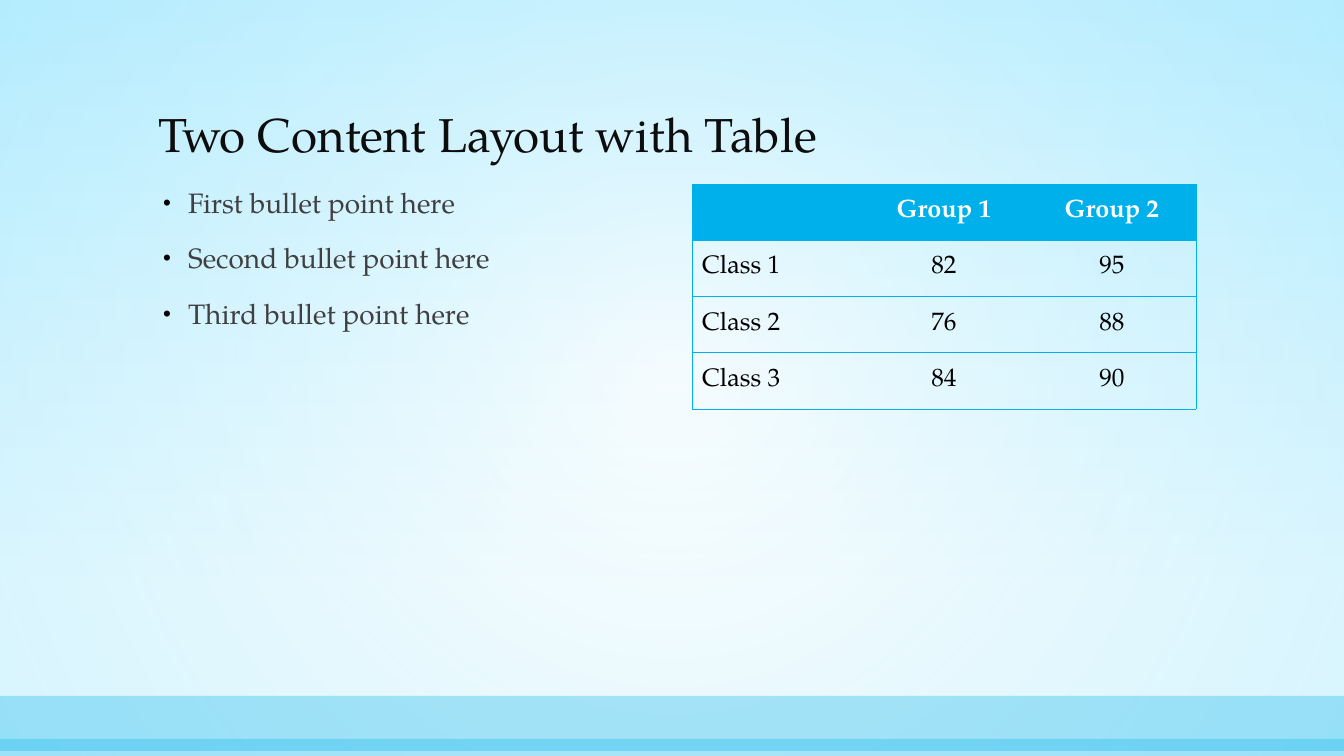
import pptx
import pptx.util
import pptx.dml.color
import pptx.enum.shapes
import pptx.enum.text
import pptx.oxml
import pptx.oxml.ns
from dataclasses import dataclass

PX = 914400 / 100.8
NS = pptx.oxml.ns.nsdecls("a")
ANCHOR = pptx.enum.text.MSO_ANCHOR
ALIGN = pptx.enum.text.PP_ALIGN


@dataclass(frozen=True)
class Theme:
    font: str = "TeX Gyre Pagella"
    accent: str = "00B0EA"
    sky: str = "C8F1FF"
    glow: str = "91E4FF"
    white: str = "FFFFFF"
    black: str = "000000"
    title: str = "0D0D0D"
    body: str = "404040"
    title_size: int = 34
    body_size: int = 20
    table_size: int = 18


THEME = Theme()
NO_GRID_STYLE = "{2D5ABB26-0587-4C30-8999-92F81FD0307C}"


def px(n):
    return pptx.util.Emu(round(n * PX))


def rgb(color):
    return pptx.dml.color.RGBColor.from_string(color)


def style(p, size, color, bold=False, align=ALIGN.LEFT):
    p.alignment = align
    p.font.name = THEME.font
    p.font.size = pptx.util.Pt(size)
    p.font.bold = bold
    p.font.color.rgb = rgb(color)


def add_xml(parent, xml):
    """Append an element written with the a: prefix."""
    tag, rest = xml[1:].split(" ", 1)
    parent.append(pptx.oxml.parse_xml(f"<{tag} {NS} {rest}"))


def set_gradient(fill, grad, stops, direction):
    """Stops are (position %, colour, opacity %)."""
    fill.gradient()
    for child in list(grad()):
        grad().remove(child)
    gs = "".join(
        f'<a:gs pos="{pos * 1000}"><a:srgbClr val="{color}">'
        f'<a:alpha val="{alpha * 1000}"/></a:srgbClr></a:gs>'
        for pos, color, alpha in stops)
    add_xml(grad(), f"<a:gsLst >{gs}</a:gsLst>")
    add_xml(grad(), direction)


def add_rect(s, box):
    sp = s.shapes.add_shape(pptx.enum.shapes.MSO_SHAPE.RECTANGLE, *map(px, box))
    sp.shadow.inherit = False
    sp.line.fill.background()
    return sp


def add_backdrop(s, box):
    x, y, w, h = box
    # Vertical sky gradient
    bg = s.background.fill
    set_gradient(bg, lambda: s.element.find(".//" + pptx.oxml.ns.qn("a:gradFill")),
                 [(0, THEME.sky, 56), (79, THEME.white, 100)],
                 '<a:lin ang="5400000" scaled="0"/>')
    # Round glow from the centre
    sp = add_rect(s, box)
    set_gradient(sp.fill,
                 lambda: sp.element.spPr.find(pptx.oxml.ns.qn("a:gradFill")),
                 [(0, THEME.white, 49), (100, THEME.glow, 35)],
                 '<a:path path="circle"><a:fillToRect l="50000" t="50000" '
                 'r="50000" b="50000"/></a:path>')
    # Footer bands: distance from the bottom, height, opacity
    for rise, height, alpha in [(60, 55, 30), (17, 17, 28)]:
        band = add_rect(s, (x, y + h - rise, w, height))
        band.fill.solid()
        band.fill.fore_color.rgb = rgb(THEME.accent)
        color = band.element.spPr.find(".//" + pptx.oxml.ns.qn("a:srgbClr"))
        add_xml(color, f'<a:alpha val="{alpha * 1000}"/>')


def place(sp, box, anchor):
    """Move a placeholder to its box, in front of the backdrop."""
    sp.left, sp.top, sp.width, sp.height = map(px, box)
    tree = sp.element.getparent()
    tree.append(sp.element)
    tf = sp.text_frame
    tf.word_wrap = True
    tf.auto_size = pptx.enum.text.MSO_AUTO_SIZE.NONE
    tf.vertical_anchor = anchor
    return tf


def add_title(s, box, text):
    tf = place(s.shapes.title, box, ANCHOR.BOTTOM)
    tf.text = text
    p = tf.paragraphs[0]
    p.line_spacing = 0.9
    style(p, THEME.title_size, THEME.title)


def add_bullets(s, box, items):
    tf = place(s.placeholders[1], box, ANCHOR.TOP)
    tf.text = "\n".join(items)
    for p in tf.paragraphs:
        p.line_spacing = 0.9
        p.space_before = pptx.util.Pt(18)
        pPr = p._p.get_or_add_pPr()
        pPr.set("marL", str(px(30)))
        pPr.set("indent", str(px(-25)))
        add_xml(pPr, f'<a:buClr ><a:srgbClr val="{THEME.black}"/></a:buClr>')
        add_xml(pPr, '<a:buSzPct val="80000"/>')
        add_xml(pPr, '<a:buChar char="•"/>')
        style(p, THEME.body_size, THEME.body)


def set_borders(cell, visible):
    tcPr = cell._tc.get_or_add_tcPr()
    for side in "LRTB":
        fill = (f'<a:solidFill><a:srgbClr val="{THEME.accent}"/></a:solidFill>'
                if side in visible else "<a:noFill/>")
        add_xml(tcPr, f'<a:ln{side} w="6350">{fill}</a:ln{side}>')


def add_score_table(s, box, rows):
    n_rows, n_cols = len(rows), len(rows[0])
    table = s.shapes.add_table(n_rows, n_cols, *map(px, box)).table
    table.horz_banding = False
    table._tbl.tblPr.find(pptx.oxml.ns.qn("a:tableStyleId")).text = NO_GRID_STYLE
    for col in table.columns:
        col.width = px(box[2] / n_cols)
    for row in table.rows:
        row.height = px(box[3] / n_rows)
    for i, values in enumerate(rows):
        for j, value in enumerate(values):
            cell = table.cell(i, j)
            cell.text = value
            cell.vertical_anchor = ANCHOR.MIDDLE
            # Horizontal rules everywhere, vertical ones only outside
            set_borders(cell, "TB" + "L" * (j == 0) + "R" * (j == n_cols - 1))
            if i == 0:
                cell.fill.solid()
                cell.fill.fore_color.rgb = rgb(THEME.accent)
            else:
                cell.fill.background()
            style(cell.text_frame.paragraphs[0], THEME.table_size,
                  THEME.black if i else THEME.white, bold=i == 0,
                  align=ALIGN.CENTER if j else ALIGN.LEFT)


def main():
    prs = pptx.Presentation()
    prs.slide_width, prs.slide_height = px(1344), px(756)
    s = prs.slides.add_slide(prs.slide_layouts[1])
    add_backdrop(s, (0, 0, 1344, 756))
    add_title(s, (148, 48, 1048, 120), "Two Content Layout with Table")
    add_bullets(s, (148, 184, 504, 479), [
        "First bullet point here",
        "Second bullet point here",
        "Third bullet point here",
    ])
    add_score_table(s, (692, 184, 504, 225), [
        ["", "Group 1", "Group 2"],
        ["Class 1", "82", "95"],
        ["Class 2", "76", "88"],
        ["Class 3", "84", "90"],
    ])
    prs.save("out.pptx")


if __name__ == "__main__":
    main()
